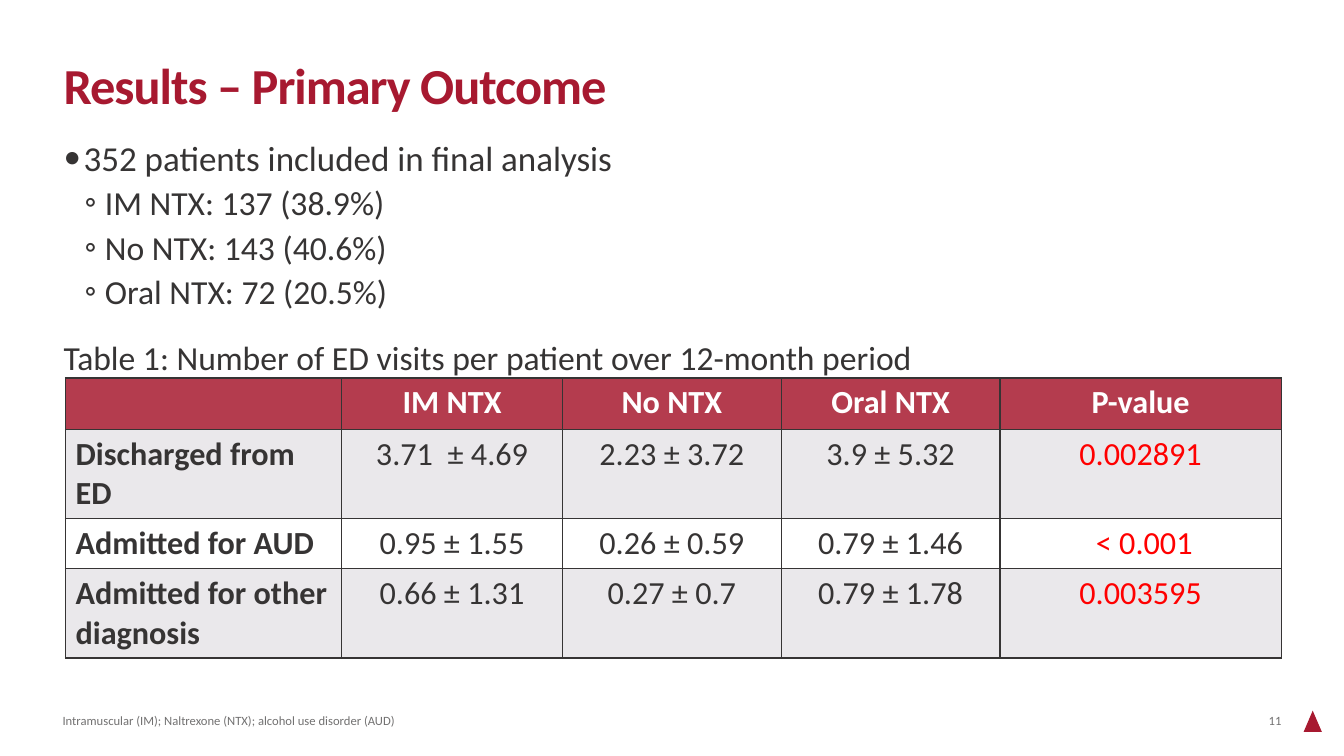
from lxml.etree import SubElement
from pptx import Presentation
from pptx.dml.color import RGBColor
from pptx.enum.shapes import MSO_SHAPE as Shape
from pptx.enum.text import MSO_ANCHOR as Anchor, MSO_AUTO_SIZE as AutoSize, PP_ALIGN as Align
from pptx.oxml.ns import qn
from pptx.util import Inches, Pt

INK, CRIMSON, MUTED, RED, WHITE = "363434", "A71930", "727171", "FF0000", "FFFFFF"
HEADER_FILL, BAND_FILL = "B43C4E", "EAE8EB"
color = RGBColor.from_string


def write(paragraph, text, size, hue=INK, bold=False, align=Align.LEFT, before=0,
          bullet=None, indent=0, tracking=0):
    paragraph.alignment = align
    paragraph.space_before = Pt(before)
    run = paragraph.add_run()
    run.text = text
    run.font.name = "Calibri"
    run.font.size = Pt(size)
    run.font.bold = bold
    run.font.color.rgb = color(hue)
    if tracking:
        run._r.get_or_add_rPr().set("spc", str(tracking))
    if bullet:
        properties = paragraph._p.get_or_add_pPr()
        properties.set("marL", str(Inches(indent)))
        properties.set("indent", str(Inches(-0.2)))
        SubElement(properties, qn("a:buFont"), typeface="Calibri")
        SubElement(properties, qn("a:buChar"), char=bullet)


def fit(frame, anchor, inset=0, wrap=True):
    frame.word_wrap = wrap
    frame.auto_size = AutoSize.NONE
    frame.vertical_anchor = anchor
    frame.margin_left = frame.margin_right = 0
    frame.margin_top = frame.margin_bottom = Inches(inset)
    return frame.paragraphs[0]


deck = Presentation()
deck.slide_width, deck.slide_height = Inches(13.33), Inches(7.5)
slide = deck.slides.add_slide(deck.slide_layouts[5])

emblem = slide.shapes.add_shape(Shape.ISOSCELES_TRIANGLE, Inches(12.93), Inches(7.05),
                                Inches(0.18), Inches(0.21))
emblem.shadow.inherit = False
emblem.fill.solid()
emblem.fill.fore_color.rgb = color(CRIMSON)
emblem.line.fill.background()

title = slide.shapes.title
title.left, title.top = Inches(0.63), Inches(0.6)
title.width, title.height = Inches(12.08), Inches(0.55)
heading = fit(title.text_frame, Anchor.TOP)
heading.line_spacing = 0.9
write(heading, "Results – Primary Outcome", 36, hue=CRIMSON, bold=True, tracking=-70)

footers = [
    ("Intramuscular (IM); Naltrexone (NTX); alcohol use disorder (AUD)", 0.62, 10.28, Align.LEFT, True),
    ("11", 12.18, 0.53, Align.RIGHT, False),
]
for text, left, width, align, wrap in footers:
    footer = slide.shapes.add_textbox(Inches(left), Inches(7.03), Inches(width), Inches(0.23))
    write(fit(footer.text_frame, Anchor.BOTTOM, inset=0.04, wrap=wrap), text, 9, hue=MUTED, align=align)

summary = slide.shapes.add_textbox(Inches(0.63), Inches(1.35), Inches(12.08), Inches(5.39)).text_frame
write(fit(summary, Anchor.TOP), "352 patients included in final analysis", 25, bullet="•", indent=0.2)
for group in ["IM NTX: 137 (38.9%)", "No NTX: 143 (40.6%)", "Oral NTX: 72 (20.5%)"]:
    group_line = summary.add_paragraph()
    group_line.level = 1
    write(group_line, group, 24, before=3, bullet="◦", indent=0.41)
write(summary.add_paragraph(), "Table 1: Number of ED visits per patient over 12-month period", 24, before=18)

visits = [
    ["", "IM NTX", "No NTX", "Oral NTX", "P-value"],
    ["Discharged from ED", "3.71  ± 4.69", "2.23 ± 3.72", "3.9 ± 5.32", "0.002891"],
    ["Admitted for AUD", "0.95 ± 1.55", "0.26 ± 0.59", "0.79 ± 1.46", " < 0.001"],
    ["Admitted for other diagnosis", "0.66 ± 1.31", "0.27 ± 0.7", "0.79 ± 1.78", "0.003595"],
]
column_widths = [2.74, 2.19, 2.17, 2.17, 2.79]
row_heights = [0.51, 0.88, 0.5, 0.88]
row_fills = [HEADER_FILL, BAND_FILL, WHITE, BAND_FILL]
table = slide.shapes.add_table(len(visits), len(column_widths), Inches(0.65), Inches(3.75),
                               Inches(sum(column_widths)), Inches(sum(row_heights))).table
for column, width in zip(table.columns, column_widths):
    column.width = Inches(width)
for r, (values, height, row_fill) in enumerate(zip(visits, row_heights, row_fills)):
    table.rows[r].height = Inches(height)
    for c, value in enumerate(values):
        cell = table.cell(r, c)
        for side in ("a:lnL", "a:lnR", "a:lnT", "a:lnB"):
            border = SubElement(cell._tc.get_or_add_tcPr(), qn(side), w=str(Pt(1)))
            SubElement(SubElement(border, qn("a:solidFill")), qn("a:srgbClr"), val=INK)
        cell.fill.solid()
        cell.fill.fore_color.rgb = color(row_fill)
        hue = WHITE if r == 0 else RED if c == 4 else INK
        write(cell.text_frame.paragraphs[0], value, 23, hue=hue, bold=r == 0 or c == 0,
              align=Align.CENTER if c else Align.LEFT)

deck.save("out.pptx")
